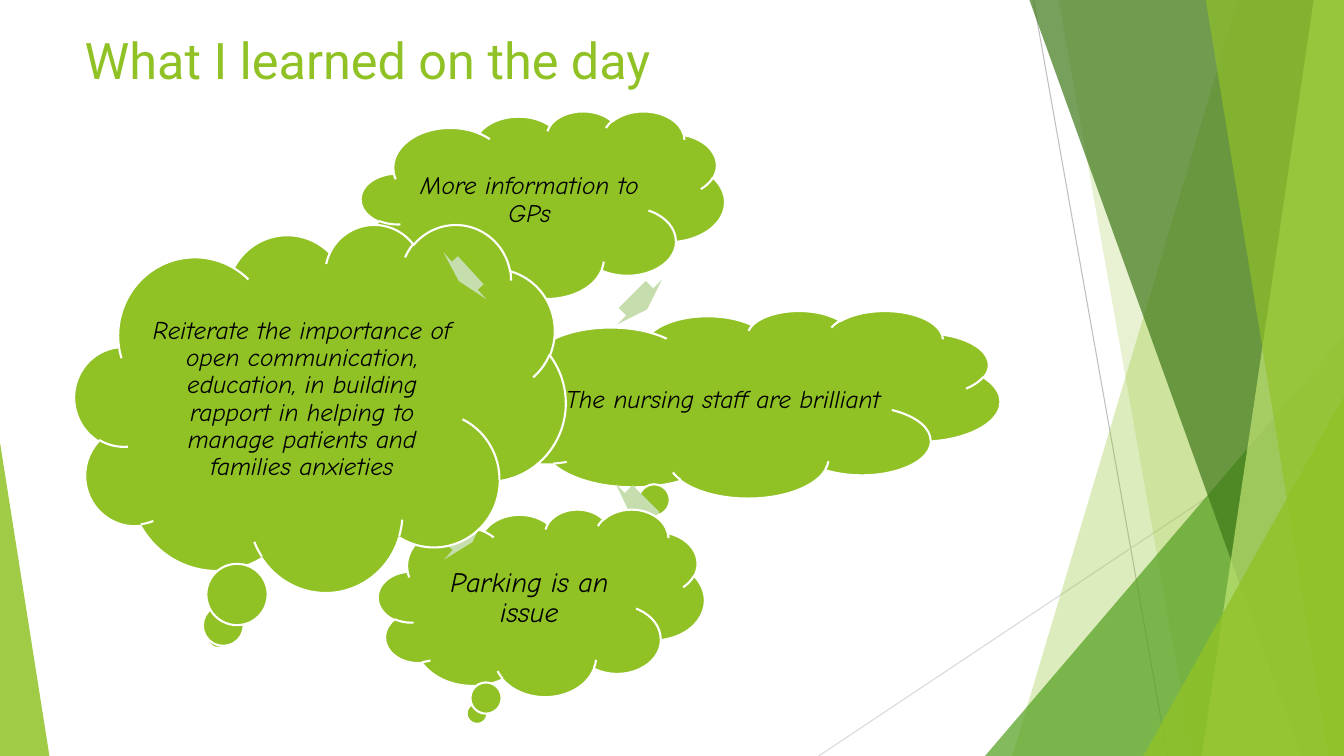
from lxml.etree import SubElement
from pptx import Presentation
from pptx.dml.color import RGBColor
from pptx.enum.shapes import MSO_CONNECTOR, MSO_SHAPE
from pptx.enum.text import MSO_ANCHOR, PP_ALIGN
from pptx.oxml.ns import qn
from pptx.util import Inches, Pt

HUES = {
    "lime": "90C226", "green": "54A021", "dark": "3F7819", "pale": "C0E474",
    "arrow": "C6DDAD", "white": "FFFFFF", "black": "000000",
    "gray": "BFBFBF", "light": "D9D9D9",
}
WIDE, HIGH = 13.33, 7.5


class Deck:
    head, body = "Roboto", "Comic Neue"

    def __init__(self):
        self.prs = Presentation()
        self.prs.slide_width = Inches(WIDE)
        self.prs.slide_height = Inches(HIGH)
        self.slide = self.prs.slides.add_slide(self.prs.slide_layouts[5])
        self.shapes = self.slide.shapes

    def hue(self, name):
        return RGBColor.from_string(HUES[name])

    def paint(self, shape, hue, alpha=100):
        shape.shadow.inherit = False
        shape.fill.solid()
        shape.fill.fore_color.rgb = self.hue(hue)
        shape.line.fill.background()
        if alpha < 100:
            tint = shape._element.spPr.find(qn("a:solidFill"))[0]
            SubElement(tint, qn("a:alpha"), val=str(alpha * 1000))

    def add_text(self, para, text, size, font, hue, slant=False):
        run = para.add_run()
        run.text = text
        run.font.size = Pt(size)
        run.font.name = font
        run.font.italic = slant
        run.font.color.rgb = self.hue(hue)

    def title(self, text, *box):
        ph = self.shapes.title
        ph.left, ph.top, ph.width, ph.height = map(Inches, box)
        ph.text_frame.vertical_anchor = MSO_ANCHOR.TOP
        para = ph.text_frame.paragraphs[0]
        para.alignment = PP_ALIGN.LEFT
        self.add_text(para, text, 36, self.head, "lime")

    def line(self, start, end, hue):
        line = self.shapes.add_connector(
            MSO_CONNECTOR.STRAIGHT, *map(Inches, start + end))
        line.line.color.rgb = self.hue(hue)
        line.line.width = Pt(0.75)
        SubElement(line._element.spPr, qn("a:effectLst"))

    def band(self, top, foot, hue, alpha):
        """Band from the top and foot points out to the right edge."""
        form = self.shapes.build_freeform(Inches(top), 0)
        form.add_line_segments([
            (Inches(x), Inches(y))
            for x, y in ((WIDE, 0), (WIDE, HIGH), (foot, HIGH))])
        self.paint(form.convert_to_shape(), hue, alpha)

    def preset(self, kind, box, hue, alpha=100):
        shape = self.shapes.add_shape(kind, *map(Inches, box))
        self.paint(shape, hue, alpha)
        return shape

    def wedge(self, box, tip, hue, alpha):
        shape = self.preset(MSO_SHAPE.ISOSCELES_TRIANGLE, box, hue, alpha)
        shape.adjustments[0] = tip

    def cloud(self, text, box, size):
        shape = self.preset(MSO_SHAPE.CLOUD_CALLOUT, box, "lime")
        shape.line.color.rgb = self.hue("white")
        shape.line.width = Pt(1.5)
        # Label inside the puffs
        x, y, w, h = box
        label = self.shapes.add_textbox(*map(Inches, (
            x + 0.137 * w, y + 0.151 * h, 0.653 * w, 0.652 * h)))
        frame = label.text_frame
        frame.word_wrap = True
        frame.vertical_anchor = MSO_ANCHOR.MIDDLE
        frame.margin_left = frame.margin_right = Inches(0.03)
        frame.margin_top = frame.margin_bottom = Inches(0.03)
        para = frame.paragraphs[0]
        para.alignment = PP_ALIGN.CENTER
        para.line_spacing = 0.9
        self.add_text(para, text, size, self.body, "black", True)

    def arrow(self, x, y, w, turn):
        shape = self.preset(MSO_SHAPE.RIGHT_ARROW, (x, y, w, 0.63), "arrow")
        shape.adjustments[0] = 0.6
        shape.rotation = turn


def main():
    deck = Deck()

    # Side decoration
    deck.line((10.25, 0), (11.58, HIGH), "gray")
    deck.line((WIDE, 4.03), (8.12, HIGH), "light")
    deck.band(12.28, 10.04, "lime", 30)
    deck.band(10.5, 11.83, "lime", 20)
    deck.wedge((9.77, 3.33, 3.56, 4.17), 1, "green", 72)
    deck.band(10.21, 12.91, "dark", 70)
    deck.band(13.03, 11.92, "pale", 70)
    deck.band(11.96, 13.18, "lime", 65)
    deck.wedge((11.34, 3.93, 1.99, 3.57), 1, "lime", 80)
    deck.wedge((0, 4.39, 0.49, 3.11), 0, "lime", 85)

    deck.title("What I learned on the day", 0.74, 0.24, 9.4, 1.44)

    # Cycle of clouds, each followed by its arrow
    cycle = [
        ("More information to GPs", (3.58, 1.1, 3.61, 1.86), 18,
         (6.24, 2.68, 0.21, 45)),
        ("The nursing staff are brilliant", (4.8, 3.08, 5.12, 1.86), 18,
         (6.22, 4.71, 0.22, 135.2)),
        ("Parking is an issue", (3.75, 5.05, 3.24, 1.86), 20,
         (4.52, 5, 0.19, 41.5)),
        ("Reiterate the importance of open communication, education, in "
         "building rapport in helping to manage patients and families "
         "anxieties", (0.74, 2.22, 4.87, 3.65), 18,
         (4.53, 2.42, 0.16, 137.5)),
    ]
    for text, box, size, arrow in cycle:
        deck.cloud(text, box, size)
        deck.arrow(*arrow)

    deck.prs.save("out.pptx")


if __name__ == "__main__":
    main()
